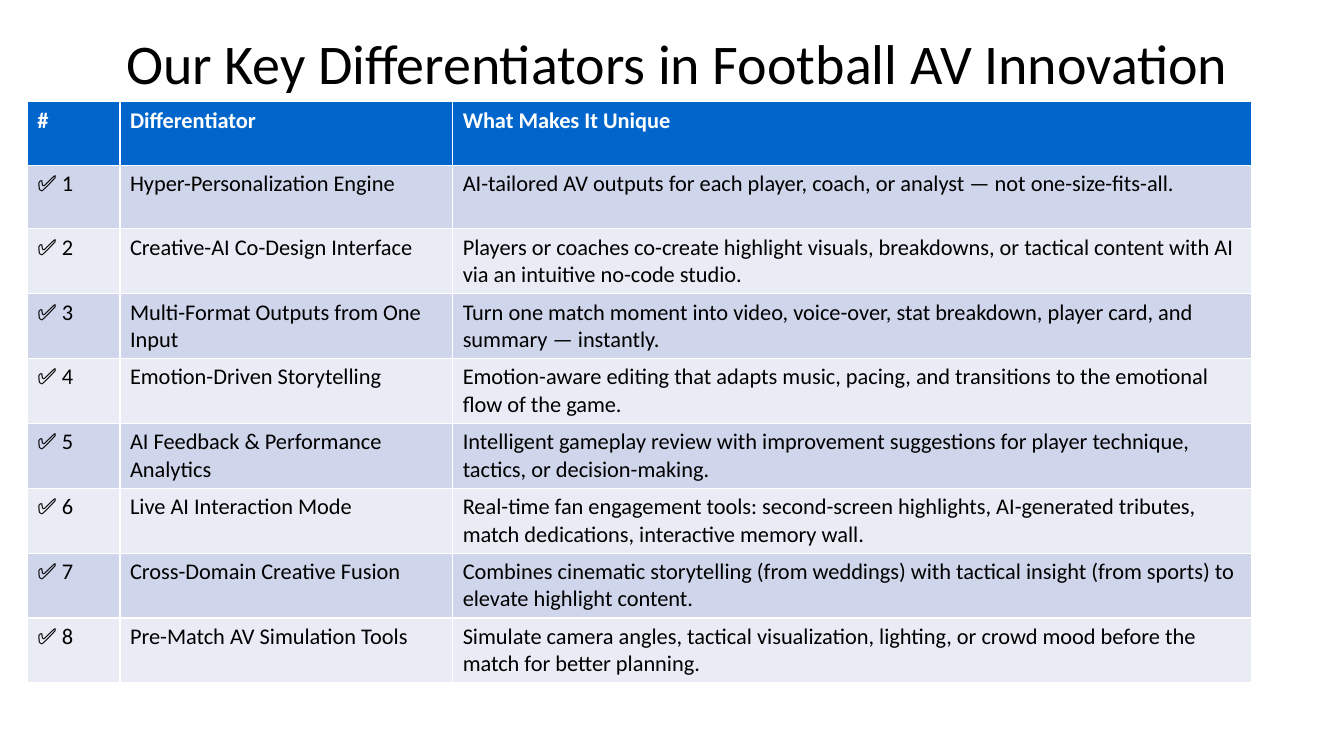
from dataclasses import dataclass

from pptx import Presentation
from pptx.dml.color import RGBColor
from pptx.enum.text import MSO_ANCHOR, PP_ALIGN
from pptx.util import Inches, Pt

CENTER, LEFT = PP_ALIGN.CENTER, PP_ALIGN.LEFT
MIDDLE = MSO_ANCHOR.MIDDLE
TITLE_ONLY = 5


@dataclass(frozen=True)
class Theme:
    font: str = "Calibri"
    title_size: int = 40
    table_size: int = 16
    text: str = "000000"
    header_text: str = "FFFFFF"
    header_fill: str = "0066CC"
    bands: tuple = ("CFD5EA", "E9EBF5")


THEME = Theme()

TITLE = "Our Key Differentiators in Football AV Innovation"
HEADERS = ("#", "Differentiator", "What Makes It Unique")
COL_WIDTHS = (0.92, 3.3, 7.92)
ROW_HEIGHT = 0.63
DIFFERENTIATORS = [
    ("Hyper-Personalization Engine",
     "AI-tailored AV outputs for each player, coach, or analyst — not one-size-fits-all."),
    ("Creative-AI Co-Design Interface",
     "Players or coaches co-create highlight visuals, breakdowns, or tactical content "
     "with AI via an intuitive no-code studio."),
    ("Multi-Format Outputs from One Input",
     "Turn one match moment into video, voice-over, stat breakdown, player card, "
     "and summary — instantly."),
    ("Emotion-Driven Storytelling",
     "Emotion-aware editing that adapts music, pacing, and transitions to the "
     "emotional flow of the game."),
    ("AI Feedback & Performance Analytics",
     "Intelligent gameplay review with improvement suggestions for player technique, "
     "tactics, or decision-making."),
    ("Live AI Interaction Mode",
     "Real-time fan engagement tools: second-screen highlights, AI-generated tributes, "
     "match dedications, interactive memory wall."),
    ("Cross-Domain Creative Fusion",
     "Combines cinematic storytelling (from weddings) with tactical insight "
     "(from sports) to elevate highlight content."),
    ("Pre-Match AV Simulation Tools",
     "Simulate camera angles, tactical visualization, lighting, or crowd mood before "
     "the match for better planning."),
]


def write(tf, text, size, color=THEME.text, bold=False, align=LEFT, spacing=1.0):
    p = tf.paragraphs[0]
    p.alignment = align
    p.line_spacing = spacing
    r = p.add_run()
    r.text = text
    r.font.name = THEME.font
    r.font.size = Pt(size)
    r.font.bold = bold
    r.font.color.rgb = RGBColor.from_string(color)


def add_title(s, text):
    sp = s.shapes.title
    sp.left, sp.top = Inches(0.5), Inches(0.3)
    sp.width, sp.height = Inches(12.43), Inches(0.71)
    sp.text_frame.word_wrap = True
    sp.text_frame.vertical_anchor = MIDDLE
    write(sp.text_frame, text, THEME.title_size, align=CENTER, spacing=0.9)


def fill_row(table, row, texts, fill, **fmt):
    for col, text in enumerate(texts):
        cell = table.cell(row, col)
        cell.fill.solid()
        cell.fill.fore_color.rgb = RGBColor.from_string(fill)
        write(cell.text_frame, text, THEME.table_size, **fmt)


def add_differentiator_table(s):
    n = len(DIFFERENTIATORS) + 1
    table = s.shapes.add_table(n, len(HEADERS), Inches(0.27), Inches(1.01),
                               Inches(sum(COL_WIDTHS)), Inches(ROW_HEIGHT * n)).table
    for column, width in zip(table.columns, COL_WIDTHS):
        column.width = Inches(width)
    for row in table.rows:
        row.height = Inches(ROW_HEIGHT)

    # Header, then numbered rows in alternating bands
    fill_row(table, 0, HEADERS, THEME.header_fill, color=THEME.header_text, bold=True)
    for i, texts in enumerate(DIFFERENTIATORS, start=1):
        fill_row(table, i, (f"✅ {i}", *texts), THEME.bands[(i - 1) % 2])


def main():
    prs = Presentation()
    prs.slide_width, prs.slide_height = Inches(13.33), Inches(7.5)
    s = prs.slides.add_slide(prs.slide_layouts[TITLE_ONLY])
    add_title(s, TITLE)
    add_differentiator_table(s)
    prs.save("out.pptx")


if __name__ == "__main__":
    main()
